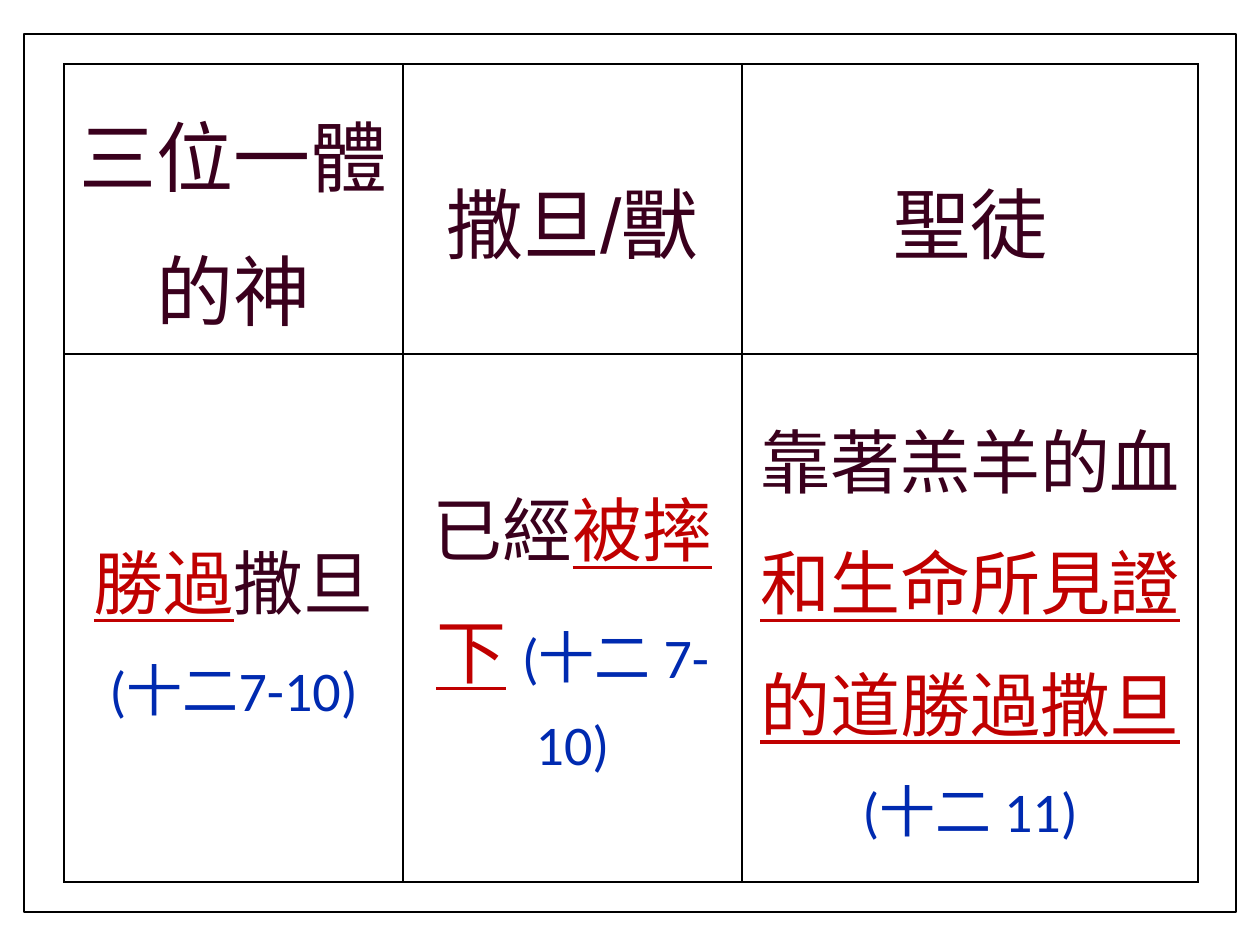
"""Build a slide with a bordered table on God, Satan and the saints."""
from dataclasses import dataclass

from lxml import etree
from pptx import Presentation
from pptx.dml.color import RGBColor
from pptx.enum import shapes, text
from pptx.oxml import ns
from pptx.slide import Slide
from pptx.table import _Cell
from pptx.util import Inches, Pt

COLORS = {
    "paper": "FFFFFF",
    "line": "000000",
    "plum": "3A001D",
    "red": "C00000",
    "blue": "002AB0",
}
COLUMN_WIDTHS = (2.69, 2.69, 3.62)
ROW_HEIGHTS = (2.3, 4.19)


@dataclass(frozen=True)
class Phrase:
    words: str
    size: int = 40
    font: str = "Calibri"
    color: str = "plum"
    underline: bool = False


def heading(words: str) -> Phrase:
    return Phrase(words, size=44, font="Arial")


def stress(words: str) -> Phrase:
    return Phrase(words, color="red", underline=True)


def verse(words: str) -> Phrase:
    return Phrase(words, size=32, color="blue")


ROWS = (
    ((heading("三位一體的神"),), (heading("撒旦/獸"),), (heading("聖徒"),)),
    (
        (stress("勝過"), Phrase("撒旦 "), verse("(十二7-10)")),
        (Phrase("已經"), stress("被摔下"), Phrase(" ", color="red"), verse("(十二 7-10)")),
        (Phrase("靠著羔羊的血"), stress("和生命所見證的道勝過撒旦"), verse("(十二 11)")),
    ),
)


def rgb(name: str) -> RGBColor:
    return RGBColor.from_string(COLORS[name])


def add_text(paragraph, words: str, *, size: int, font: str, color: str, underline: bool) -> None:
    run = paragraph.add_run()
    run.text = words
    run.font.size = Pt(size)
    run.font.name = font
    run.font.bold = False
    run.font.underline = underline
    run.font.color.rgb = rgb(color)


def add_borders(cell: _Cell) -> None:
    properties = cell._tc.get_or_add_tcPr()
    for position, side in enumerate(("lnL", "lnR", "lnT", "lnB")):
        border = etree.Element(ns.qn(f"a:{side}"), w=str(Pt(1)))
        fill = etree.SubElement(border, ns.qn("a:solidFill"))
        etree.SubElement(fill, ns.qn("a:srgbClr"), val=COLORS["line"])
        properties.insert(position, border)


def fill_cell(cell: _Cell, phrases: tuple[Phrase, ...]) -> None:
    cell.fill.background()
    cell.vertical_anchor = text.MSO_ANCHOR.MIDDLE
    cell.margin_left = cell.margin_right = Inches(0.07)
    cell.margin_top = cell.margin_bottom = Inches(0.05)
    add_borders(cell)
    paragraph = cell.text_frame.paragraphs[0]
    paragraph.alignment = text.PP_ALIGN.CENTER
    paragraph.line_spacing = 1.2
    paragraph.space_before = paragraph.space_after = Pt(6)
    for phrase in phrases:
        add_text(paragraph, phrase.words, size=phrase.size, font=phrase.font,
                 color=phrase.color, underline=phrase.underline)


def add_frame(slide: Slide) -> None:
    frame = slide.shapes.add_shape(
        shapes.MSO_SHAPE.RECTANGLE, Inches(0.19), Inches(0.27), Inches(9.62), Inches(6.97))
    frame.shadow.inherit = False
    frame.fill.solid()
    frame.fill.fore_color.rgb = rgb("paper")
    frame.line.color.rgb = rgb("line")
    frame.line.width = Pt(1)


def add_comparison(slide: Slide) -> None:
    table = slide.shapes.add_table(
        len(ROW_HEIGHTS), len(COLUMN_WIDTHS), Inches(0.51), Inches(0.51),
        Inches(sum(COLUMN_WIDTHS)), Inches(sum(ROW_HEIGHTS))).table
    table.first_row = table.horz_banding = False
    for column, width in zip(table.columns, COLUMN_WIDTHS):
        column.width = Inches(width)
    for row, height, contents in zip(table.rows, ROW_HEIGHTS, ROWS):
        row.height = Inches(height)
        for cell, phrases in zip(row.cells, contents):
            fill_cell(cell, phrases)


def main() -> None:
    presentation = Presentation()
    presentation.slide_width, presentation.slide_height = Inches(10), Inches(7.5)
    slide = presentation.slides.add_slide(presentation.slide_layouts[6])
    add_frame(slide)
    add_comparison(slide)
    presentation.save("out.pptx")


if __name__ == "__main__":
    main()
